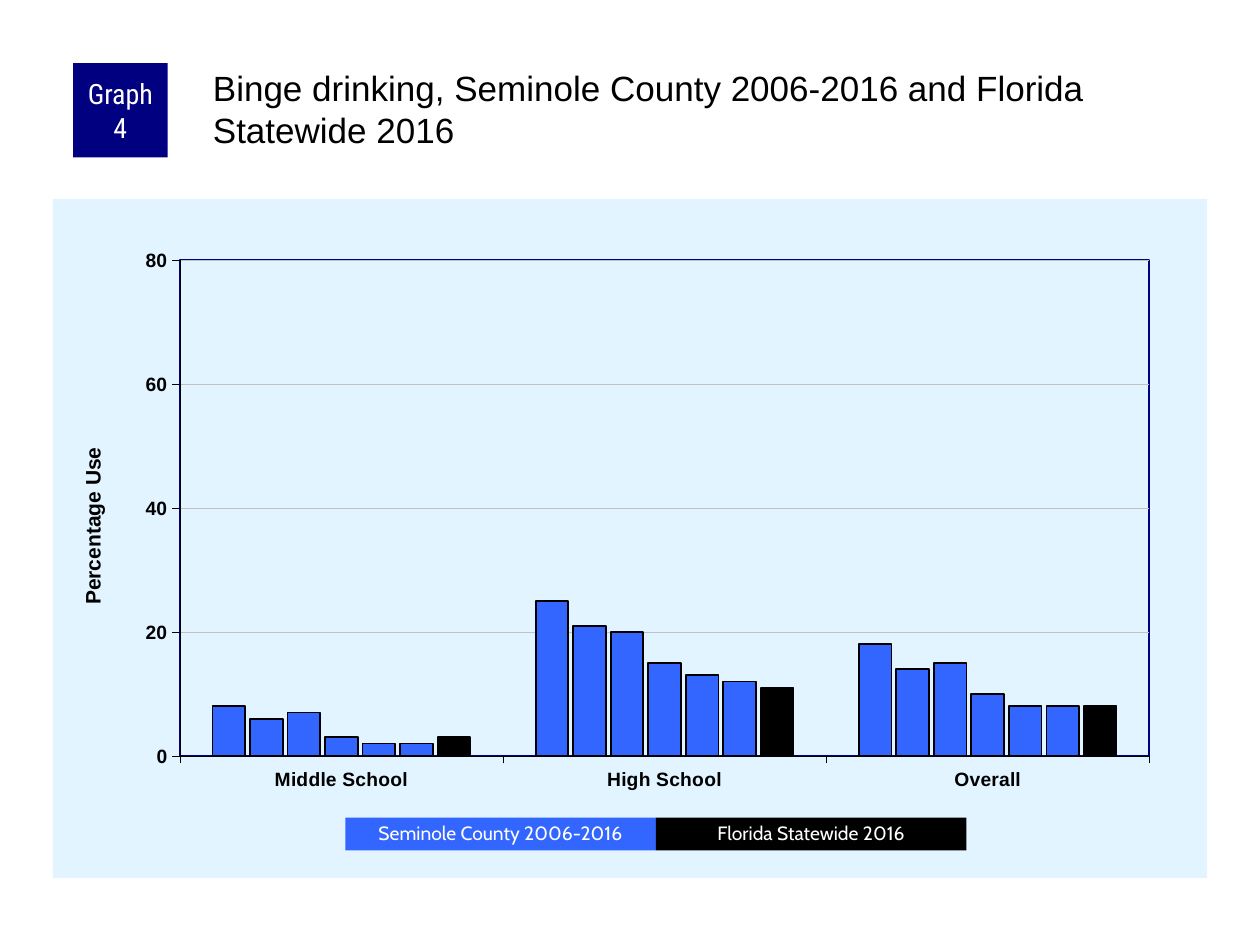
from lxml.etree import SubElement as Sub
from pptx import Presentation
from pptx.chart.data import CategoryChartData as Data
from pptx.dml.color import RGBColor as RGB
from pptx.enum.chart import XL_CHART_TYPE as Kind, XL_TICK_MARK as Tick
from pptx.enum.shapes import MSO_SHAPE as Shape
from pptx.enum.text import MSO_ANCHOR as Anchor, PP_ALIGN as Align
from pptx.oxml import parse_xml
from pptx.oxml.ns import nsdecls, qn
from pptx.util import Inches, Pt

BLACK, WHITE = RGB(0, 0, 0), RGB(255, 255, 255)
NAVY, BLUE = RGB(0, 0, 128), RGB(0x33, 0x66, 0xFF)
PALE, GREY = RGB(0xE1, 0xF4, 0xFF), RGB(0xC0, 0xC0, 0xC0)

USE = {
    "Middle School": (8, 6, 7, 3, 2, 2, 3),
    "High School": (25, 21, 20, 15, 13, 12, 11),
    "Overall": (18, 14, 15, 10, 8, 8, 8),
}
KEYS = (("Seminole County 2006-2016", BLUE), ("Florida Statewide 2016", BLACK))


def set_font(font, face, size, color, bold=False):
    """Set face, size, colour and weight of a font."""
    font.name, font.size, font.bold = face, Pt(size), bold
    font.color.rgb = color


def set_line(line, color, width):
    """Give a line its colour and width in points."""
    line.color.rgb, line.width = color, Pt(width)


def set_spot(part, **spot):
    """Place a chart part by fractions of the chart."""
    node = part.find(qn("c:layout"))
    if node is None:
        node = parse_xml(f"<c:layout {nsdecls('c')}/>")
        text = part.find(qn("c:tx"))
        if text is None:
            part.insert(0, node)
        else:
            text.addnext(node)
    spot_node = Sub(node, qn("c:manualLayout"))
    if "w" in spot:
        Sub(spot_node, qn("c:layoutTarget"), val="inner")
    for side in "xy":
        Sub(spot_node, qn(f"c:{side}Mode"), val="edge")
    for side, share in spot.items():
        Sub(spot_node, qn(f"c:{side}"), val=str(share))


def add_box(slide, box, text, fill, face, size):
    """Add a filled box with centred white text."""
    shape = slide.shapes.add_shape(Shape.RECTANGLE, *map(Inches, box))
    shape.shadow.inherit = False
    shape.fill.solid()
    shape.fill.fore_color.rgb = fill
    shape.line.fill.background()
    frame = shape.text_frame
    frame.word_wrap, frame.vertical_anchor = True, Anchor.MIDDLE
    frame.margin_left = frame.margin_right = Inches(0.05)
    frame.margin_top = frame.margin_bottom = 0
    para = frame.paragraphs[0]
    para.text, para.alignment = text, Align.CENTER
    set_font(para.font, face, size, WHITE)
    return para


def add_head(slide, left, top, width, height):
    """Add the graph number and the title beside it."""
    side, inset = 0.75, 1.08
    add_box(slide, (left, top, side, side), "Graph 4", NAVY, "Roboto Condensed", 16)
    box = (left + inset, top, width - inset, height)
    frame = slide.shapes.add_textbox(*map(Inches, box)).text_frame
    frame.word_wrap = True
    frame.margin_left = frame.margin_top = Inches(0.03)
    frame.margin_right = frame.margin_bottom = 0
    para = frame.paragraphs[0]
    para.text = "Binge drinking, Seminole County 2006-2016 and Florida Statewide 2016"
    set_font(para.font, "Arial", 20, BLACK)


def style_axes(chart):
    """Style both axes, the grid and the value title."""
    value = chart.value_axis
    for axis in (chart.category_axis, value):
        axis.major_tick_mark, axis.minor_tick_mark = Tick.OUTSIDE, Tick.NONE
        set_font(axis.tick_labels.font, "Arial", 11, BLACK, True)
        set_line(axis.format.line, BLACK, 0.25)
    value.minimum_scale, value.maximum_scale, value.major_unit = 0, 80, 20
    set_line(value.major_gridlines.format.line, GREY, 0.25)
    title = value.axis_title
    para = title.text_frame.paragraphs[0]
    para.text = "Percentage Use"
    set_font(para.font, "Arial", 12, BLACK, True)
    set_spot(title._element, x=0.02, y=0.36)


def add_bars(slide, *box):
    """Add the column chart on its pale ground."""
    data = Data()
    data.categories = list(USE)
    for num, vals in enumerate(zip(*USE.values()), 1):
        data.add_series(f"Series {num}", vals)
    frame = slide.shapes.add_chart(Kind.COLUMN_CLUSTERED, *map(Inches, box), data)
    chart = frame.chart
    chart.has_legend = chart.has_title = False
    set_font(chart.font, "Arial", 8, BLACK)
    plot = chart.plots[0]
    plot.gap_width, plot.overlap, plot.vary_by_categories = 200, -15, False
    last = len(plot.series) - 1
    for num, series in enumerate(plot.series):
        series.invert_if_negative = False
        series.format.fill.solid()
        series.format.fill.fore_color.rgb = BLACK if num == last else BLUE
        set_line(series.format.line, BLACK, 1)
    style_axes(chart)
    body = chart._chartSpace.find(qn("c:chart"))
    area = body.find(qn("c:plotArea"))
    set_spot(area, x=0.11, y=0.09, w=0.84, h=0.73)
    names = nsdecls("c", "a")
    area.append(parse_xml(
        f'<c:spPr {names}><a:noFill/><a:ln w="{Pt(1)}"><a:solidFill>'
        f'<a:srgbClr val="{NAVY}"/></a:solidFill></a:ln></c:spPr>'))
    body.addnext(parse_xml(
        f'<c:spPr {names}><a:solidFill><a:srgbClr val="{PALE}"/></a:solidFill>'
        "<a:ln><a:noFill/></a:ln></c:spPr>"))


def add_key(slide, left, top, width, height):
    """Add the key as equal boxes in a row."""
    step = width / len(KEYS)
    for num, (text, fill) in enumerate(KEYS):
        box = (left + num * step, top, step, height)
        add_box(slide, box, text, fill, "Cabin", 11).line_spacing = 0.9


def main():
    """Build the slide and save it."""
    deck = Presentation()
    deck.slide_width, deck.slide_height = Inches(10), Inches(7.5)
    slide = deck.slides.add_slide(deck.slide_layouts[6])
    add_bars(slide, 0.42, 1.58, 9.16, 5.39)
    add_head(slide, 0.58, 0.5, 9, 0.83)
    add_key(slide, 2.74, 6.49, 4.93, 0.26)
    deck.save("out.pptx")


if __name__ == "__main__":
    main()
